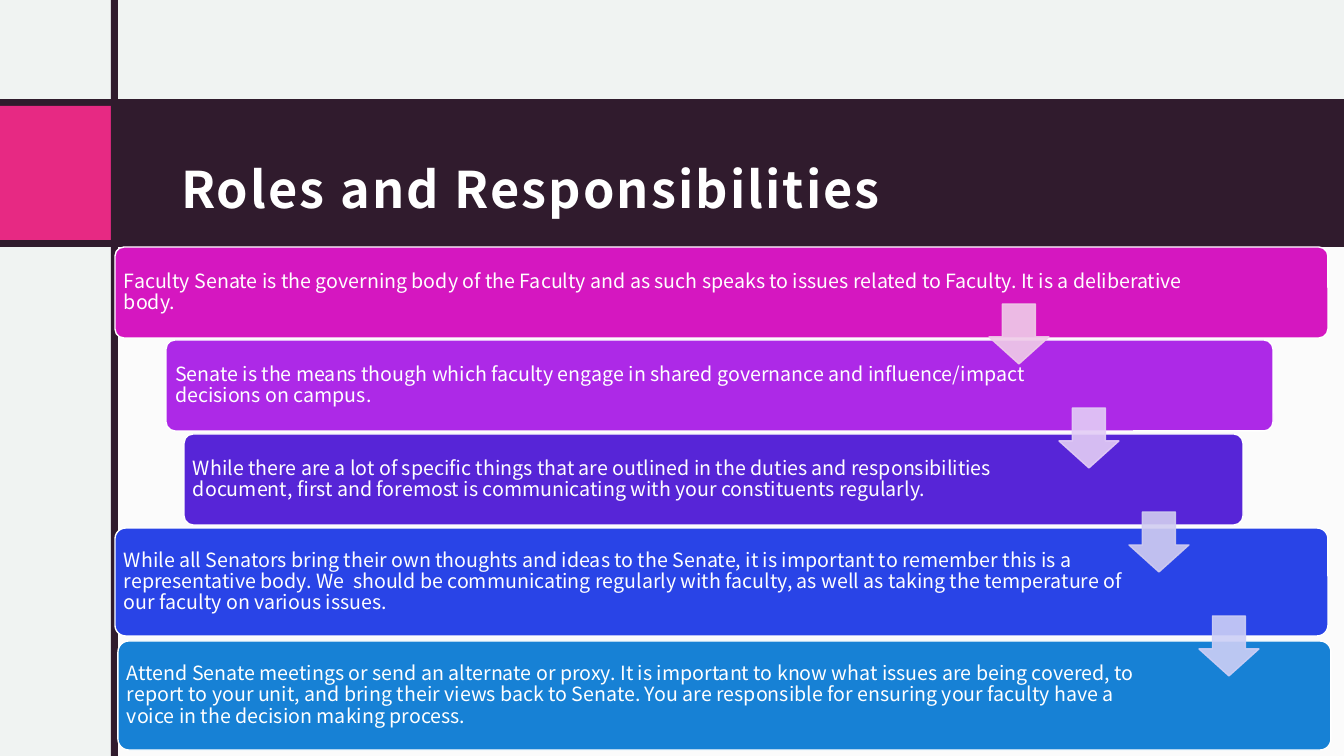
from lxml.etree import SubElement
from pptx import Presentation
from pptx.dml.color import RGBColor
from pptx.enum.shapes import MSO_SHAPE
from pptx.enum.text import MSO_ANCHOR, PP_ALIGN
from pptx.oxml.ns import qn
from pptx.util import Emu, Pt

EMU_PER_PX = 914400 / 100.8
SLIDE_W, SLIDE_H = 1344, 756
FONT = "Noto Sans CJK JP"

WHITE = RGBColor(0xFF, 0xFF, 0xFF)
MIST = RGBColor(0xF0, 0xF3, 0xF2)
PLUM = RGBColor(0x30, 0x1B, 0x2D)
PINK = RGBColor(0xE7, 0x29, 0x83)

# Each role: left, top, width, height, text width, colour, wording
ROLES = [
    (115, 247, 1213, 91, 1073, RGBColor(0xD5, 0x17, 0xC0),
     "Faculty Senate is the governing body of the Faculty and as such speaks to "
     "issues related to Faculty. It is a deliberative body."),
    (166, 340, 1107, 91, 949, RGBColor(0xAD, 0x29, 0xE7),
     "Senate is the means though which faculty engage in shared governance and "
     "influence/impact decisions on campus."),
    (184, 434, 1059, 91, 908, RGBColor(0x57, 0x25, 0xD7),
     "While there are a lot of specific things that are outlined in the duties and "
     "responsibilities document, first and foremost is communicating with your "
     "constituents regularly."),
    (115, 528, 1213, 108, 1038, RGBColor(0x29, 0x44, 0xE7),
     "While all Senators bring their own thoughts and ideas to the Senate, it is "
     "important to remember this is a representative body. We  should be "
     "communicating regularly with faculty, as well as taking the temperature of "
     "our faculty on various issues."),
    (118, 641, 1213, 109, 1038, RGBColor(0x17, 0x81, 0xD5),
     "Attend Senate meetings or send an alternate or proxy. It is important to know "
     "what issues are being covered, to report to your unit, and bring their views "
     "back to Senate. You are responsible for ensuring your faculty have a voice in "
     "the decision making process."),
]

ARROW_COLORS = [
    RGBColor(0xEF, 0xCC, 0xE8),
    RGBColor(0xE3, 0xCD, 0xF6),
    RGBColor(0xD1, 0xCD, 0xF0),
    RGBColor(0xCD, 0xCF, 0xF6),
]
ARROW_LEFT, ARROW_TOP, ARROW_SIZE = 989, 304, 60
ARROW_STEP_X, ARROW_STEP_Y = 70, 104


def px(length):
    return Emu(round(length * EMU_PER_PX))


def add_block(slide, kind, box, color, opacity=100, line=None, adjustments=()):
    block = slide.shapes.add_shape(kind, *map(px, box))
    block.shadow.inherit = False
    for index, value in enumerate(adjustments):
        block.adjustments[index] = value
    block.fill.solid()
    block.fill.fore_color.rgb = color
    if line is None:
        block.line.fill.background()
    else:
        block.line.color.rgb = line
        block.line.width = Pt(1)
    if opacity < 100:
        for solid in block._element.spPr.iter(qn("a:solidFill")):
            SubElement(solid[0], qn("a:alpha"), val=str(opacity * 1000))
    return block


def add_words(slide, box, words, size, insets, line_spacing, after=0,
              bold=False, tracking=0):
    frame = slide.shapes.add_textbox(*map(px, box)).text_frame
    frame.word_wrap = True
    frame.vertical_anchor = MSO_ANCHOR.MIDDLE
    (frame.margin_left, frame.margin_top,
     frame.margin_right, frame.margin_bottom) = map(px, insets)
    paragraph = frame.paragraphs[0]
    paragraph.alignment = PP_ALIGN.LEFT
    paragraph.line_spacing = line_spacing
    paragraph.space_after = Pt(after)
    run = paragraph.add_run()
    run.text = words
    run.font.name = FONT
    run.font.size = Pt(size)
    run.font.bold = bold
    run.font.color.rgb = WHITE
    properties = run.font._element
    SubElement(properties, qn("a:ea"), typeface=FONT)
    if tracking:
        properties.set("spc", str(tracking))


def add_role(slide, left, top, width, height, text_width, color, words):
    add_block(slide, MSO_SHAPE.ROUNDED_RECTANGLE, (left, top, width, height),
              color, line=WHITE, adjustments=[0.1])
    add_words(slide, (left + 3, top + 3, text_width, height - 6), words, 14,
              (6, 6, 6, 6), 0.9, after=5)


def add_arrow(slide, step, color):
    box = (ARROW_LEFT + step * ARROW_STEP_X, ARROW_TOP + step * ARROW_STEP_Y,
           ARROW_SIZE, ARROW_SIZE)
    add_block(slide, MSO_SHAPE.DOWN_ARROW, box, color, opacity=90, line=color,
              adjustments=[0.55, 0.45])


def main():
    deck = Presentation()
    deck.slide_width, deck.slide_height = px(SLIDE_W), px(SLIDE_H)
    slide = deck.slides.add_slide(deck.slide_layouts[6])
    slide.background.fill.solid()
    slide.background.fill.fore_color.rgb = MIST

    # Backdrop and title band
    add_block(slide, MSO_SHAPE.RECTANGLE, (115, 235, 1229, 521), WHITE, opacity=75)
    add_block(slide, MSO_SHAPE.RECTANGLE, (0, 99, SLIDE_W, 148), PLUM)
    add_words(slide, (169, 115, 1104, 114), "Roles and Responsibilities", 36,
              (12, 12, 12, 10), 1.5, bold=True, tracking=150)
    add_block(slide, MSO_SHAPE.RECTANGLE, (0, 106, 111, 134), PINK)
    add_block(slide, MSO_SHAPE.RECTANGLE, (111, 0, 7, SLIDE_H), PLUM)

    # Roles, then the arrows leading from one to the next
    for role in ROLES:
        add_role(slide, *role)
    for step, color in enumerate(ARROW_COLORS):
        add_arrow(slide, step, color)

    deck.save("out.pptx")


if __name__ == "__main__":
    main()
